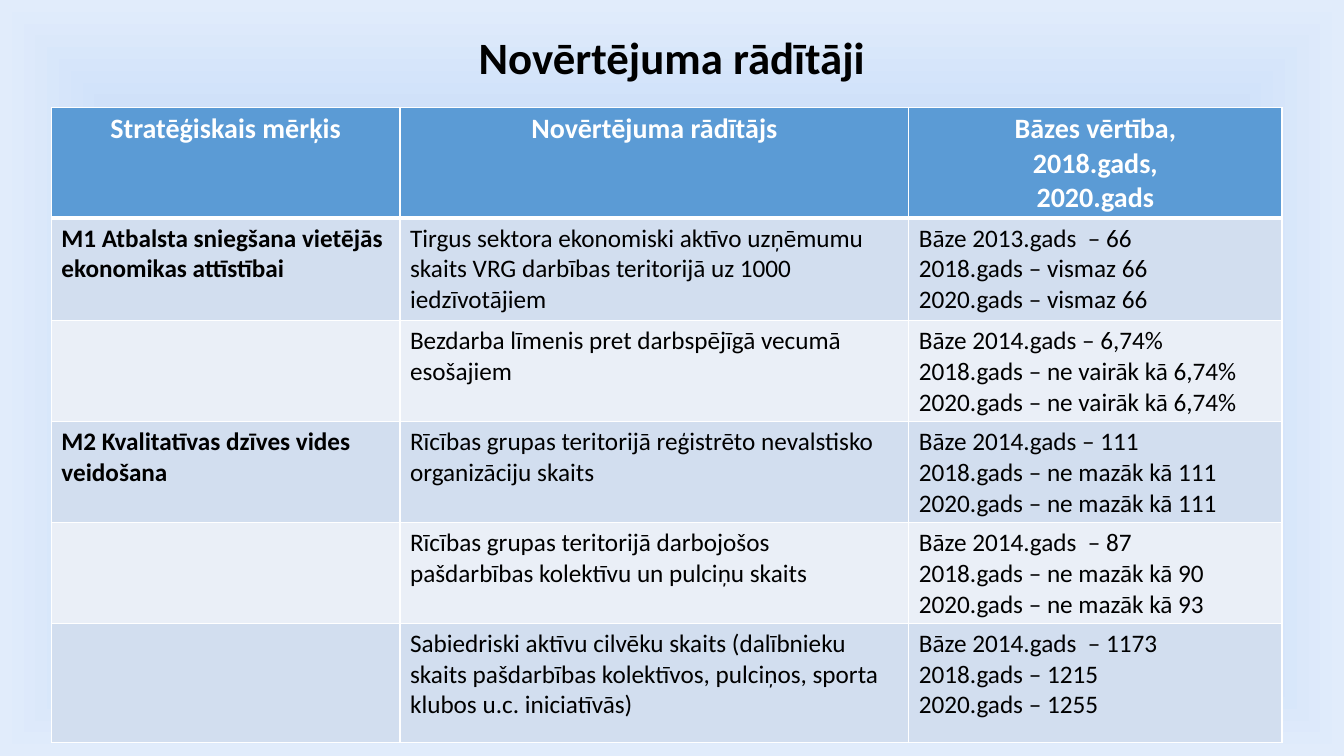
"""Build the slide with the table of evaluation indicators."""
from lxml import etree
from pptx import Presentation
from pptx.dml.color import RGBColor
from pptx.enum.text import MSO_ANCHOR, PP_ALIGN as Align
from pptx.oxml import parse_xml
from pptx.oxml.ns import nsdecls, qn
from pptx.util import Pt

FONT = "Calibri"
COLORS = {
    "text": "000000",
    "header_text": "FFFFFF",
    "header": "5B9BD5",
    "odd_row": "D2DEEF",
    "even_row": "EAEFF7",
    "border": "FFFFFF",
    "center": "FFD966",
    "middle": "C1D8F8",
    "edge": "E1ECFB",
}
GRADIENT_STOPS = [(0, "center"), (50, "middle"), (100, "edge")]
COLUMN_WIDTHS = [249, 363.5, 266.5]
ROW_HEIGHTS = [77.8, 73.4, 71.3, 71.3, 71.3, 85]
HEADERS = ["Stratēģiskais mērķis", "Novērtējuma rādītājs",
           "Bāzes vērtība,\n2018.gads,\n2020.gads"]
INDICATORS = [
    ("M1 Atbalsta sniegšana vietējās ekonomikas attīstībai",
     "Tirgus sektora ekonomiski aktīvo uzņēmumu skaits VRG darbības "
     "teritorijā uz 1000 iedzīvotājiem",
     "Bāze 2013.gads  – 66\n2018.gads – vismaz 66\n2020.gads – vismaz 66"),
    ("",
     "Bezdarba līmenis pret darbspējīgā vecumā esošajiem",
     "Bāze 2014.gads – 6,74%\n2018.gads – ne vairāk kā 6,74%\n"
     "2020.gads – ne vairāk kā 6,74%"),
    ("M2 Kvalitatīvas dzīves vides veidošana",
     "Rīcības grupas teritorijā reģistrēto nevalstisko organizāciju skaits",
     "Bāze 2014.gads – 111\n2018.gads – ne mazāk kā 111\n"
     "2020.gads – ne mazāk kā 111"),
    ("",
     "Rīcības grupas teritorijā darbojošos pašdarbības kolektīvu un "
     "pulciņu skaits",
     "Bāze 2014.gads  – 87\n2018.gads – ne mazāk kā 90\n"
     "2020.gads – ne mazāk kā 93"),
    ("",
     "Sabiedriski aktīvu cilvēku skaits (dalībnieku skaits pašdarbības "
     "kolektīvos, pulciņos, sporta klubos u.c. iniciatīvās)",
     "Bāze 2014.gads  – 1173\n2018.gads – 1215\n2020.gads – 1255"),
]


def set_background(slide):
    """Fill the background with a gradient running from centre to edges."""
    slide.background.fill.gradient()
    gradient = next(slide.element.iter(qn("a:gradFill")))
    stops = "".join(
        f'<a:gs pos="{position * 1000}"><a:srgbClr val="{COLORS[name]}"/></a:gs>'
        for position, name in GRADIENT_STOPS)
    gradient.getparent().replace(gradient, parse_xml(
        f'<a:gradFill {nsdecls("a")} rotWithShape="1"><a:gsLst>{stops}</a:gsLst>'
        '<a:path path="shape"><a:fillToRect l="50000" t="50000" r="50000" '
        'b="50000"/></a:path></a:gradFill>'))


def write_text(frame, text, size, color, bold, alignment):
    """Write text, one paragraph a line, in a single style."""
    frame.text = text
    for paragraph in frame.paragraphs:
        paragraph.alignment = alignment
        paragraph.font.name = FONT
        paragraph.font.size = Pt(size)
        paragraph.font.bold = bold
        paragraph.font.color.rgb = RGBColor.from_string(COLORS[color])


def add_title(slide, text):
    """Add the centred slide title."""
    frame = slide.shapes.add_textbox(Pt(66), Pt(15), Pt(828), Pt(56)).text_frame
    frame.word_wrap = True
    frame.vertical_anchor = MSO_ANCHOR.MIDDLE
    write_text(frame, text, 32, "text", True, Align.CENTER)
    frame.paragraphs[0].line_spacing = 0.9


def set_borders(cell, top, bottom):
    """Draw the cell borders, one point wide at the sides."""
    properties = cell._tc.get_or_add_tcPr()
    widths = {"lnL": 1, "lnR": 1, "lnT": top, "lnB": bottom}
    for index, (side, width) in enumerate(widths.items()):
        line = etree.Element(qn(f"a:{side}"), w=str(Pt(width)))
        fill = etree.SubElement(line, qn("a:solidFill"))
        etree.SubElement(fill, qn("a:srgbClr"), val=COLORS["border"])
        properties.insert(index, line)


def add_indicator_table(slide):
    """Add the table with its header and banded rows."""
    rows = [HEADERS, *INDICATORS]
    table = slide.shapes.add_table(
        len(rows), len(HEADERS), Pt(36.7), Pt(76.5),
        Pt(sum(COLUMN_WIDTHS)), Pt(sum(ROW_HEIGHTS))).table
    for column, width in zip(table.columns, COLUMN_WIDTHS):
        column.width = Pt(width)
    for row_index, texts in enumerate(rows):
        table.rows[row_index].height = Pt(ROW_HEIGHTS[row_index])
        is_header = row_index == 0
        band = "odd_row" if row_index % 2 else "even_row"
        for column_index, text in enumerate(texts):
            cell = table.cell(row_index, column_index)
            cell.fill.solid()
            cell.fill.fore_color.rgb = RGBColor.from_string(
                COLORS["header" if is_header else band])
            set_borders(cell, 3 if row_index == 1 else 1, 3 if is_header else 1)
            if is_header:
                write_text(cell.text_frame, text, 20, "header_text", True,
                           Align.CENTER)
            else:
                write_text(cell.text_frame, text, 18, "text",
                           column_index == 0, Align.LEFT)


def main():
    """Create and save the presentation."""
    presentation = Presentation()
    presentation.slide_width = Pt(960)
    presentation.slide_height = Pt(540)
    slide = presentation.slides.add_slide(presentation.slide_layouts[6])
    set_background(slide)
    add_title(slide, "Novērtējuma rādītāji")
    add_indicator_table(slide)
    presentation.save("out.pptx")


if __name__ == "__main__":
    main()
